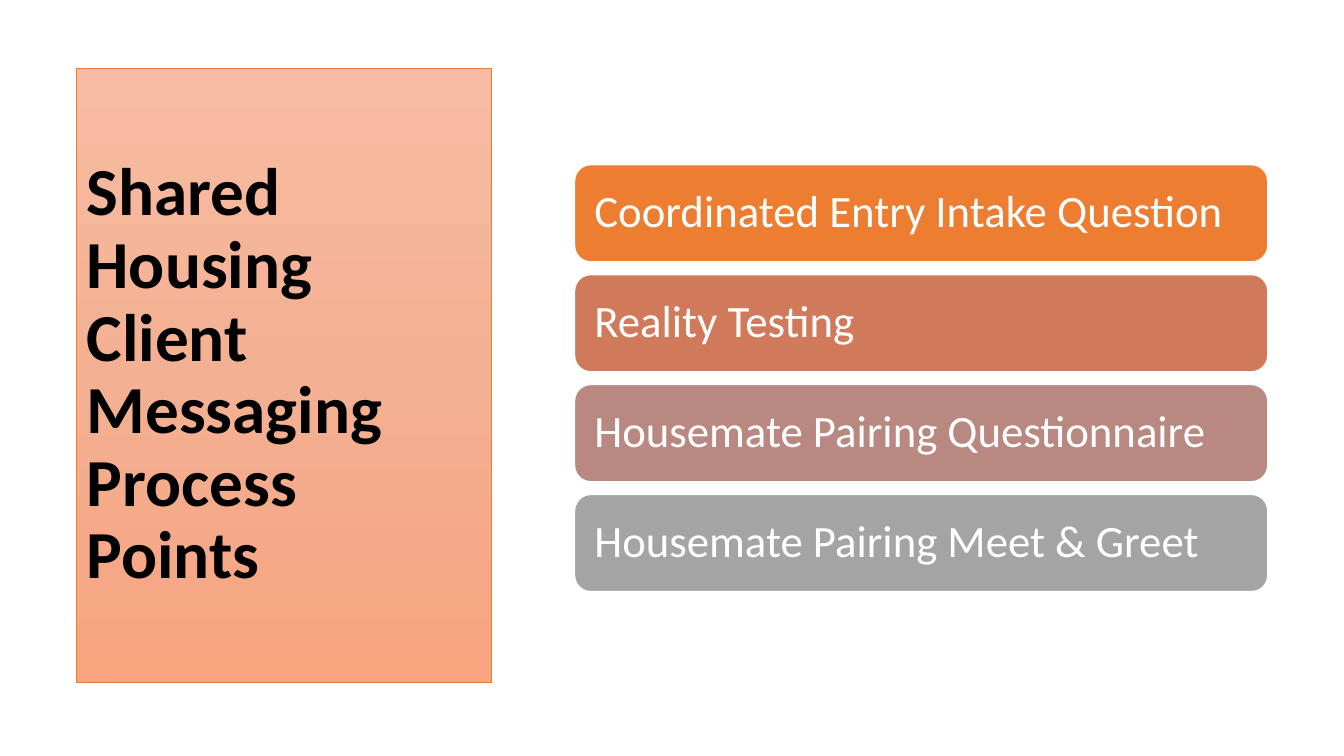
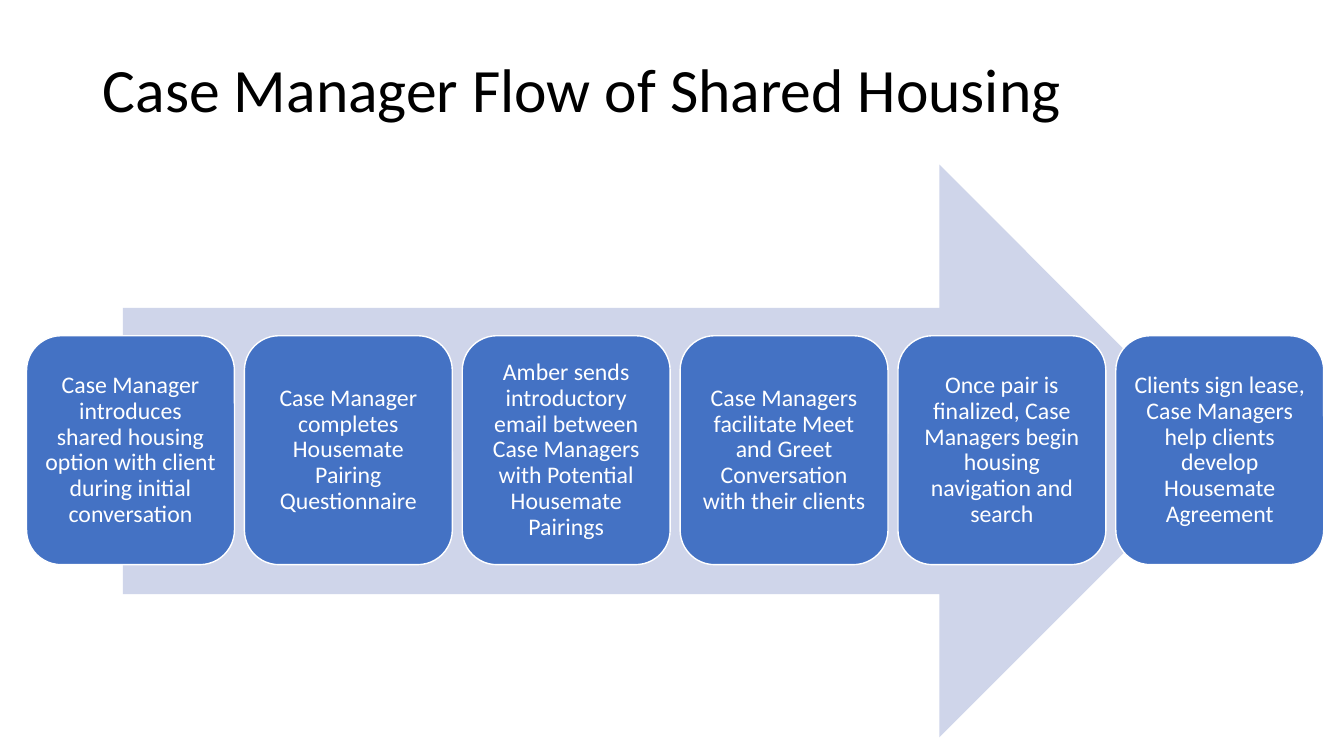
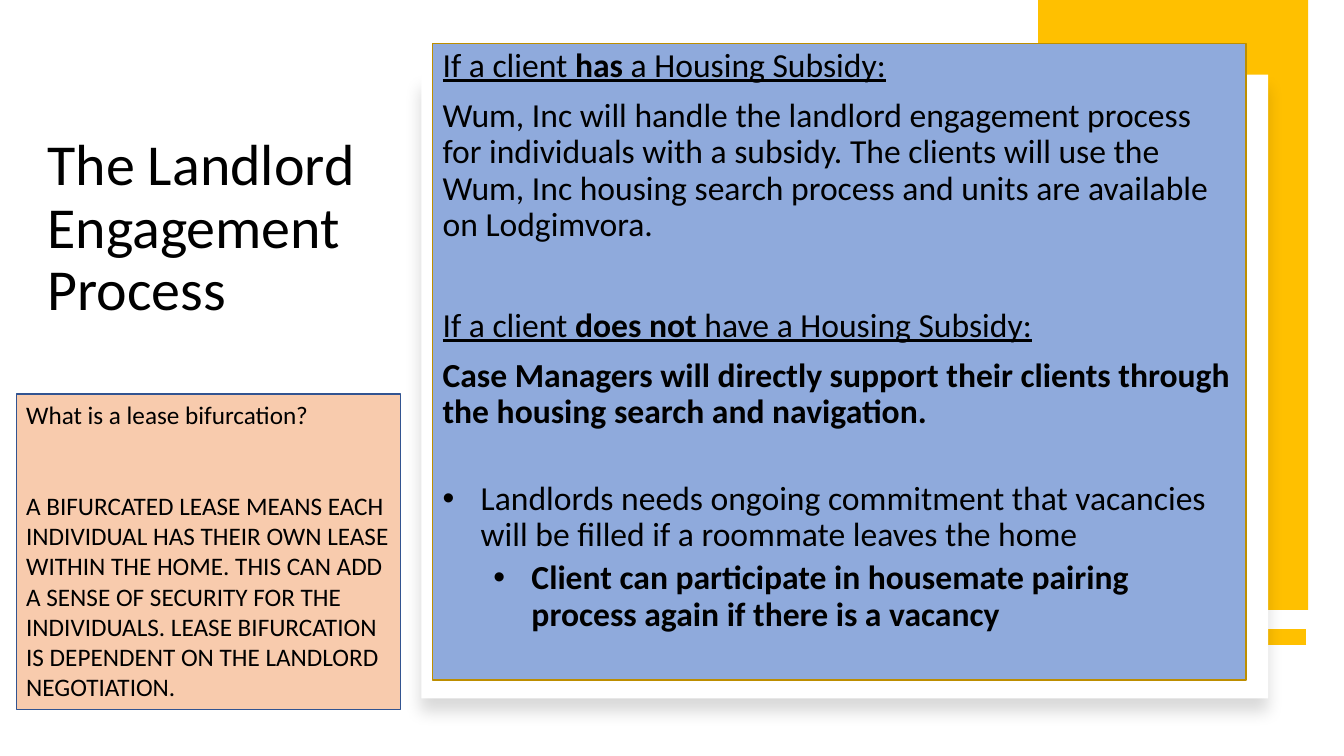
from copy import deepcopy

from lxml.etree import SubElement
from pptx import Presentation
from pptx.dml.color import RGBColor
from pptx.enum.shapes import MSO_CONNECTOR, MSO_SHAPE as Preset
from pptx.enum.text import MSO_ANCHOR as Anchor, MSO_AUTO_SIZE as AutoSize, PP_ALIGN as Align
from pptx.oxml.ns import qn
from pptx.util import Cm, Pt

FONT = "Calibri"
BLACK = RGBColor(0x00, 0x00, 0x00)
WHITE = RGBColor(0xFF, 0xFF, 0xFF)
ORANGE = RGBColor(0xED, 0x7D, 0x31)
CORAL = RGBColor(0xD0, 0x7A, 0x5B)
ROSE = RGBColor(0xB8, 0x88, 0x81)
GRAY = RGBColor(0xA4, 0xA4, 0xA4)
PEACH_TOP = RGBColor(0xF7, 0xBC, 0xA2)
PEACH_MIDDLE = RGBColor(0xF4, 0xB0, 0x93)
PEACH_BOTTOM = RGBColor(0xF7, 0xA4, 0x7F)
PEACH = RGBColor(0xF8, 0xCB, 0xAD)
BLUE = RGBColor(0x44, 0x72, 0xC4)
DARK_BLUE = RGBColor(0x32, 0x54, 0x91)
SOFT_BLUE = RGBColor(0x8F, 0xAA, 0xDC)
PALE_BLUE = RGBColor(0xCF, 0xD5, 0xEA)
GOLD = RGBColor(0xFF, 0xC0, 0x00)
DARK_GOLD = RGBColor(0xBD, 0x8E, 0x00)


def add_title(layout, text, box, size, anchor=Anchor.MIDDLE, bold=False):
    slide = deck.slides.add_slide(deck.slide_layouts[layout])
    title = slide.shapes.title
    title.left, title.top, title.width, title.height = map(Cm, box)
    title.text = text
    frame = title.text_frame
    frame.auto_size = AutoSize.NONE
    frame.vertical_anchor = anchor
    paragraph = frame.paragraphs[0]
    paragraph.alignment = Align.LEFT
    paragraph.line_spacing = 0.9
    font = paragraph.font
    font.name, font.size, font.bold = FONT, Pt(size), bold
    font.color.rgb = BLACK
    return slide


def add_box(slide, preset, box, fill, line=None, texts=(), size=18, color=WHITE,
            margin=None, align=Align.LEFT, anchor=Anchor.MIDDLE, spacing=0.9):
    shape = slide.shapes.add_shape(preset, *map(Cm, box))
    shape.shadow.inherit = False
    shape.fill.solid()
    shape.fill.fore_color.rgb = fill
    if line is None:
        shape.line.fill.background()
    else:
        shape.line.color.rgb = line
        shape.line.width = Pt(1)
    if texts:
        frame = shape.text_frame
        frame.text = "\n".join(texts)
        frame.word_wrap = True
        frame.vertical_anchor = anchor
        if margin is not None:
            frame.margin_left = frame.margin_right = Cm(margin)
            frame.margin_top = frame.margin_bottom = Cm(margin)
        for paragraph in frame.paragraphs:
            paragraph.alignment = align
            paragraph.line_spacing = spacing
            paragraph.font.name, paragraph.font.size = FONT, Pt(size)
            paragraph.font.color.rgb = color
    return shape


deck = Presentation()
deck.slide_width, deck.slide_height = Cm(33.87), Cm(19.05)

messaging = add_title(5, "Shared Housing Client Messaging Process Points",
                      (1.93, 1.73, 10.46, 15.47), 48, bold=True)
heading = messaging.shapes.title
heading.line.color.rgb = ORANGE
heading.line.width = Pt(0.75)
heading.fill.gradient()
heading.fill.gradient_angle = 270
stop_list = heading.element.find(".//" + qn("a:gsLst"))
stop_list.insert(1, deepcopy(stop_list[0]))
for stop, position, tint in zip(heading.fill.gradient_stops, (0, 0.5, 1),
                                (PEACH_TOP, PEACH_MIDDLE, PEACH_BOTTOM)):
    stop.position = position
    stop.color.rgb = tint

process_points = [
    ("Coordinated Entry Intake Question", ORANGE),
    ("Reality Testing", CORAL),
    ("Housemate Pairing Questionnaire", ROSE),
    ("Housemate Pairing Meet & Greet", GRAY),
]
for row, (point, fill) in enumerate(process_points):
    add_box(messaging, Preset.ROUNDED_RECTANGLE, (14.48, 4.15 + 2.77 * row, 17.47, 2.45),
            fill, WHITE, [point], size=32, margin=0.38)

flow = add_title(5, "Case Manager Flow of Shared Housing", (2.34, 0.48, 29.21, 3.68), 44)
add_box(flow, Preset.RIGHT_ARROW, (3.1, 4.15, 27.79, 14.43), PALE_BLUE)
flow_steps = [
    "Case Manager introduces shared housing option with client during initial conversation",
    "Case Manager completes Housemate Pairing Questionnaire",
    "Amber sends introductory email between Case Managers with Potential Housemate Pairings",
    "Case Managers facilitate Meet and Greet Conversation with their clients",
    "Once pair is finalized, Case Managers begin housing navigation and search",
    "Clients sign lease, Case Managers help clients develop Housemate Agreement",
]
for column, step in enumerate(flow_steps):
    add_box(flow, Preset.ROUNDED_RECTANGLE, (0.67 + 5.49 * column, 8.46, 5.24, 5.77),
            BLUE, WHITE, [step], size=17, margin=0.18, align=Align.CENTER)

landlord = add_title(1, "The Landlord Engagement Process", (0.94, 1.88, 8.69, 6.4),
                     41.4, anchor=Anchor.BOTTOM)
gold_bar = landlord.shapes.add_connector(MSO_CONNECTOR.STRAIGHT, Cm(32.92), Cm(16.05),
                                         Cm(26.16), Cm(16.05))
gold_bar.line.color.rgb = GOLD
gold_bar.line.width = Pt(12)
SubElement(gold_bar.element.spPr, qn("a:effectLst"))
add_box(landlord, Preset.RECTANGLE, (26.16, 0, 6.81, 15.37), GOLD)

panel = add_box(landlord, Preset.RECTANGLE, (10.62, 1.88, 21.34, 15.72), WHITE)
panel_shadow = SubElement(panel.element.spPr.find(qn("a:effectLst")), qn("a:outerShdw"),
                          blurRad=str(Pt(11)), dist=str(Pt(10)), dir="5400000", rotWithShape="0")
shadow_color = SubElement(panel_shadow, qn("a:srgbClr"), val="000000")
SubElement(shadow_color, qn("a:alpha"), val="15000")

lease_texts = [
    "What is a lease bifurcation?",
    "A BIFURCATED LEASE MEANS EACH INDIVIDUAL HAS THEIR OWN LEASE WITHIN THE HOME. "
    "THIS CAN ADD A SENSE OF SECURITY FOR THE INDIVIDUALS. LEASE BIFURCATION IS "
    "DEPENDENT ON THE LANDLORD NEGOTIATION.",
]
lease = add_box(landlord, Preset.RECTANGLE, (0.41, 9.93, 9.68, 7.95), PEACH, DARK_BLUE,
                lease_texts, color=BLACK, anchor=Anchor.TOP, spacing=1.0)
lease.text_frame.paragraphs[1].space_before = Pt(43.5)

subsidy = landlord.placeholders[1]
panel.element.getparent().append(subsidy.element)
subsidy.left, subsidy.top, subsidy.width, subsidy.height = map(Cm, (10.9, 1.09, 20.5, 16.05))
subsidy.fill.solid()
subsidy.fill.fore_color.rgb = SOFT_BLUE
subsidy.line.color.rgb = DARK_GOLD
subsidy.line.width = Pt(1)
subsidy_frame = subsidy.text_frame
subsidy_frame.auto_size = AutoSize.NONE
subsidy_frame.vertical_anchor = Anchor.TOP

subsidy_points = [
    (0, None, 0, True, [("If a client ", False), ("has", True), (" a Housing Subsidy:", False)]),
    (0, None, 10, False, [("Wum, Inc will handle the landlord engagement process for individuals "
                           "with a subsidy. The clients will use the Wum, Inc housing search "
                           "process and units are available on Lodgimvora.", False)]),
    (0, None, 46, True, [("If a client ", False), ("does not ", True),
                         ("have a Housing Subsidy:", False)]),
    (0, None, 10, False, [("Case Managers will directly support their clients through the "
                           "housing search and navigation.", True)]),
    (0, 0.96, 36, False, [("Landlords needs ongoing commitment that vacancies will be filled "
                           "if a roommate leaves the home", False)]),
    (1, 2.24, 5, False, [("Client can participate in housemate pairing process again if there "
                          "is a vacancy", True)]),
]
for index, (level, indent, before, underline, runs) in enumerate(subsidy_points):
    paragraph = subsidy_frame.paragraphs[0] if index == 0 else subsidy_frame.add_paragraph()
    paragraph.level = level
    properties = paragraph._p.get_or_add_pPr()
    properties.set("marL", str(Cm(indent or 0)))
    properties.set("indent", str(Cm(-0.96 if indent else 0)))
    if indent:
        SubElement(properties, qn("a:buFont"), typeface="Arial")
        SubElement(properties, qn("a:buChar"), char="•")
    else:
        SubElement(properties, qn("a:buNone"))
    paragraph.line_spacing = 0.9
    paragraph.space_before = Pt(before)
    paragraph.font.name, paragraph.font.size = FONT, Pt(24)
    paragraph.font.underline = underline
    paragraph.font.color.rgb = BLACK
    for text, bold in runs:
        run = paragraph.add_run()
        run.text = text
        run.font.bold = bold

deck.save("out.pptx")
